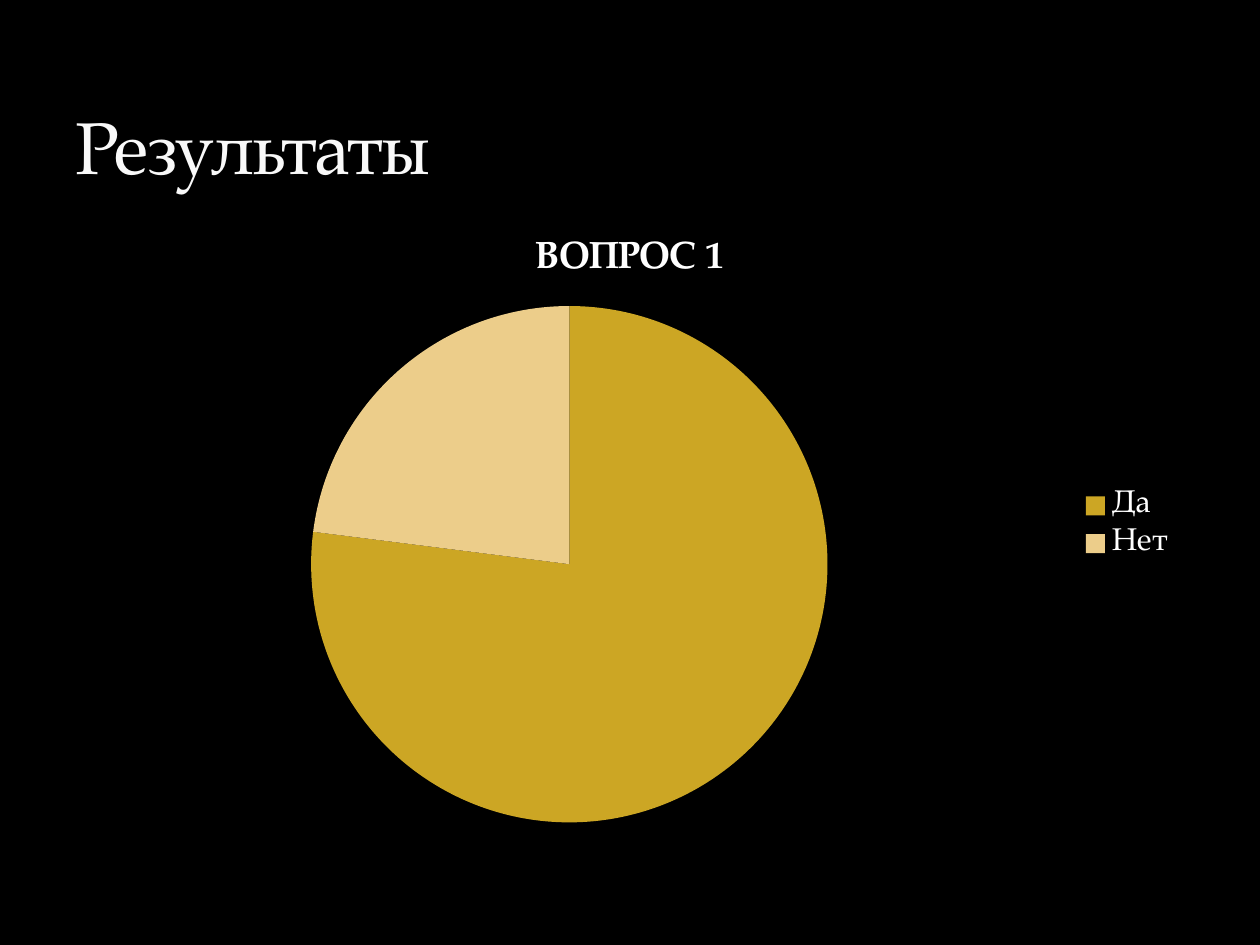
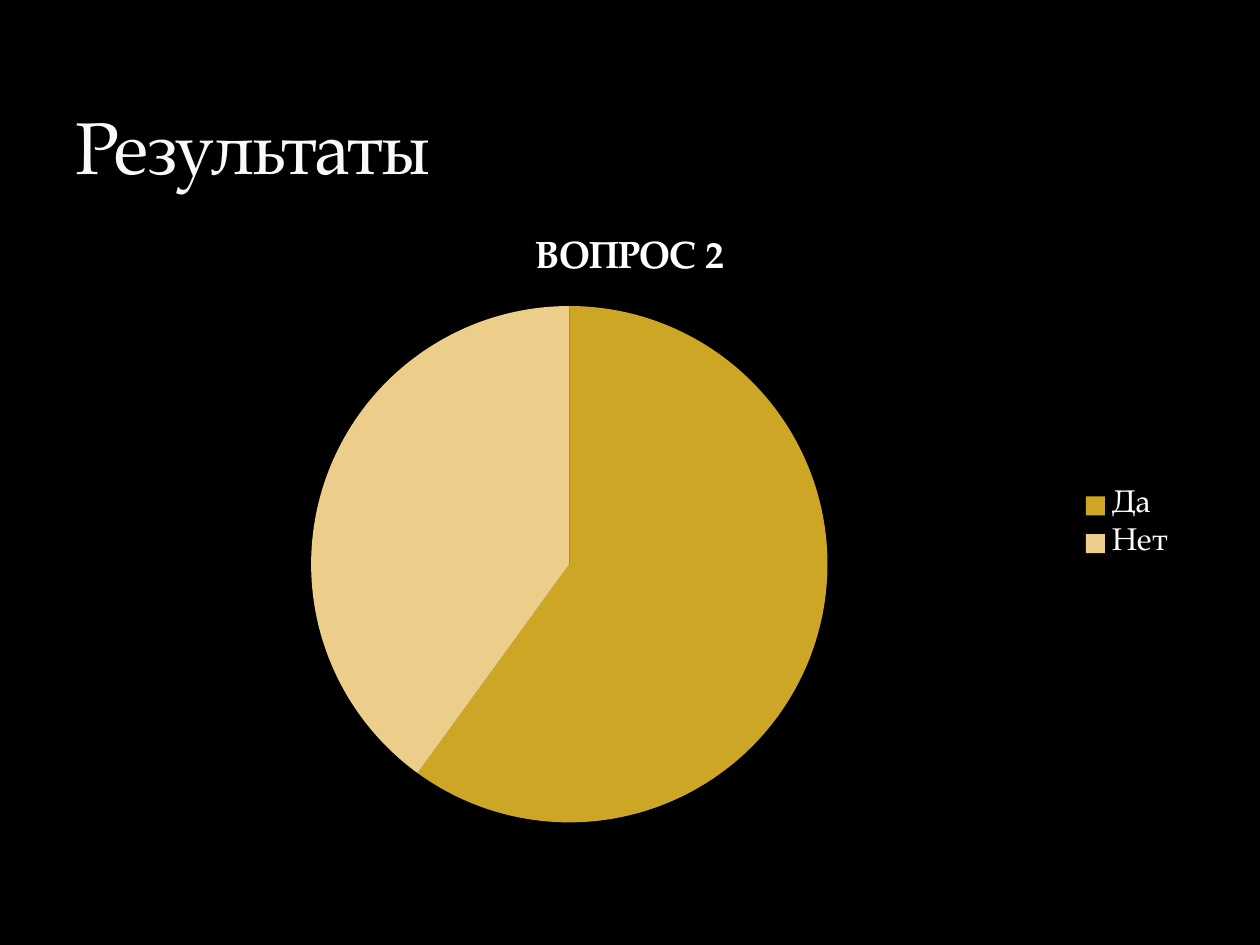
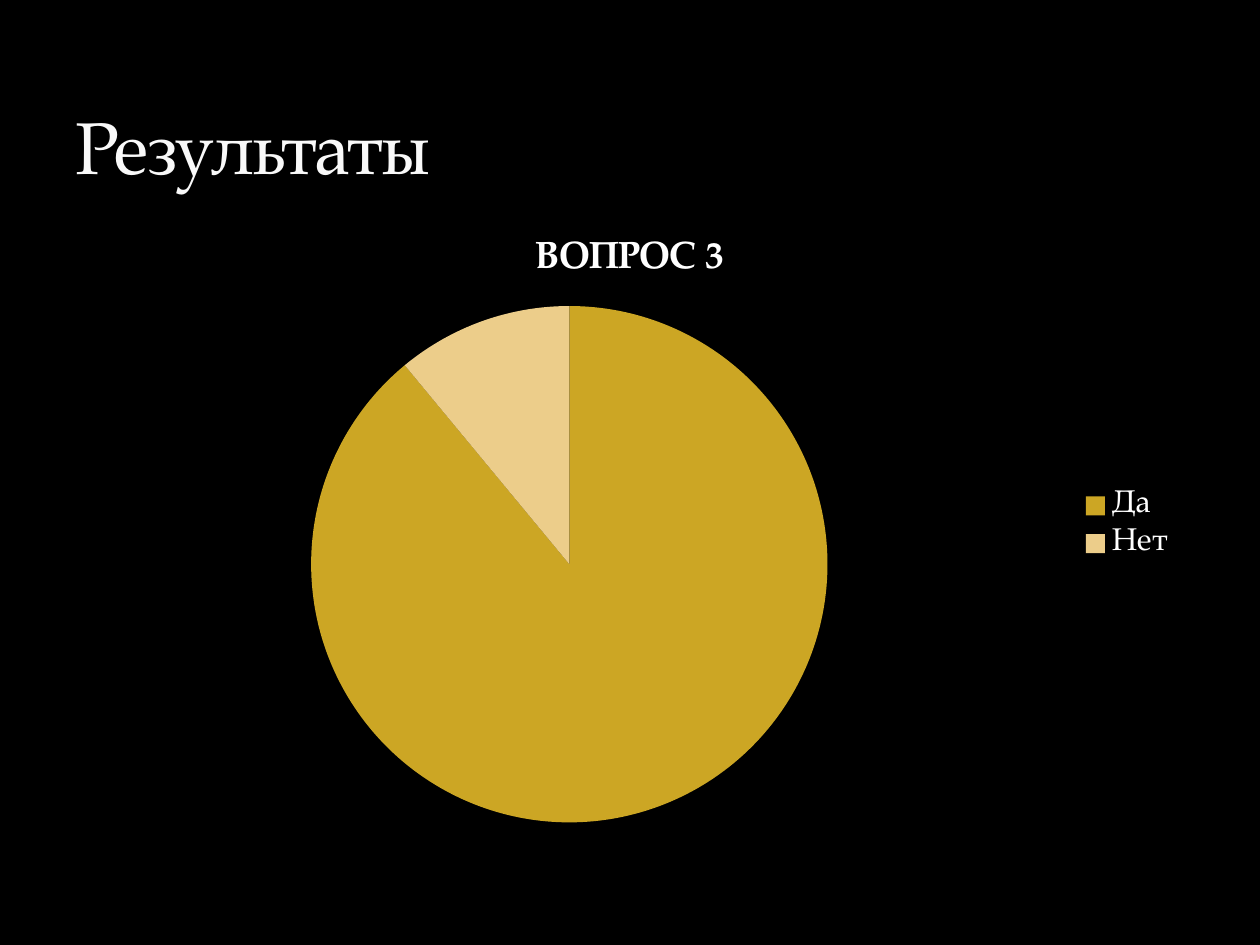
from dataclasses import dataclass

from lxml import etree
from pptx import Presentation
from pptx.chart.data import CategoryChartData
from pptx.dml.color import RGBColor
from pptx.enum.chart import XL_CHART_TYPE, XL_LEGEND_POSITION
from pptx.enum.text import MSO_ANCHOR, MSO_AUTO_SIZE, PP_ALIGN
from pptx.oxml.ns import qn
from pptx.slide import Slide
from pptx.text.text import Font
from pptx.util import Cm, Pt

PIE = XL_CHART_TYPE.PIE
LEGEND_RIGHT = XL_LEGEND_POSITION.RIGHT
ANCHOR_BOTTOM = MSO_ANCHOR.BOTTOM
ALIGN_LEFT = PP_ALIGN.LEFT
NO_AUTOFIT = MSO_AUTO_SIZE.NONE

COLORS = {
    "background": "000000",
    "heading": "F9F9F9",
    "heading_outline": "3C4422",
    "chart_text": "FFFFFF",
    "yes": "CCA624",
    "no": "ECCD8A",
}
FONT = "TeX Gyre Pagella"
HEADING = "Результаты"
ANSWERS = ("Да", "Нет ")
TITLE_ONLY_LAYOUT = 5

# Shared geometry
MARGIN = Cm(1.27)
CONTENT_WIDTH = Cm(22.86)
HEADING_TOP, HEADING_HEIGHT = Cm(0.42), Cm(3.39)
CHART_TOP, CHART_HEIGHT = Cm(4.23), Cm(12.7)


@dataclass(frozen=True)
class Question:
    title: str
    yes: int
    no: int


QUESTIONS = (
    Question("ВОПРОС 1", 77, 23),
    Question("ВОПРОС 2", 60, 40),
    Question("ВОПРОС 3", 89, 11),
)


def rgb(key: str) -> RGBColor:
    return RGBColor.from_string(COLORS[key])


def style_font(font: Font, size: float, color: str, bold: bool = False) -> None:
    font.name = FONT
    font.size = Pt(size)
    font.bold = bold
    font.color.rgb = rgb(color)


def add_heading(slide: Slide) -> None:
    heading = slide.shapes.title
    heading.left, heading.top = MARGIN, HEADING_TOP
    heading.width, heading.height = CONTENT_WIDTH, HEADING_HEIGHT
    frame = heading.text_frame
    frame.auto_size = NO_AUTOFIT
    frame.vertical_anchor = ANCHOR_BOTTOM
    frame.margin_bottom = Cm(0)
    paragraph = frame.paragraphs[0]
    paragraph.alignment = ALIGN_LEFT
    run = paragraph.add_run()
    run.text = HEADING
    style_font(run.font, 42, "heading")

    # Tight letter spacing and a faint outline
    properties = run.font._element
    properties.set("spc", "-100")
    outline = etree.Element(qn("a:ln"), w=str(Pt(0.25)))
    fill = etree.SubElement(outline, qn("a:solidFill"))
    color = etree.SubElement(fill, qn("a:srgbClr"), val=COLORS["heading_outline"])
    etree.SubElement(color, qn("a:alpha"), val="25000")
    properties.insert(0, outline)


def add_answer_pie(slide: Slide, question: Question) -> None:
    data = CategoryChartData()
    data.categories = ANSWERS
    data.add_series(question.title, (question.yes, question.no))
    chart = slide.shapes.add_chart(
        PIE, MARGIN, CHART_TOP, CONTENT_WIDTH, CHART_HEIGHT, data
    ).chart
    style_font(chart.font, 18, "chart_text")

    # Chart title
    chart.has_title = True
    run = chart.chart_title.text_frame.paragraphs[0].add_run()
    run.text = question.title
    style_font(run.font, 21.6, "chart_text", bold=True)
    chart.chart_title.include_in_layout = False

    # Legend
    chart.has_legend = True
    chart.legend.position = LEGEND_RIGHT
    chart.legend.include_in_layout = False

    # Slices
    plot = chart.plots[0]
    plot.vary_by_categories = True
    for index, answer in enumerate(("yes", "no")):
        slice_format = plot.series[0].points[index].format
        slice_format.fill.solid()
        slice_format.fill.fore_color.rgb = rgb(answer)
        slice_format.line.fill.background()


def main() -> None:
    deck = Presentation()
    deck.slide_width, deck.slide_height = Cm(25.4), Cm(19.05)
    backdrop = deck.slide_master.background.fill
    backdrop.solid()
    backdrop.fore_color.rgb = rgb("background")

    for question in QUESTIONS:
        slide = deck.slides.add_slide(deck.slide_layouts[TITLE_ONLY_LAYOUT])
        add_answer_pie(slide, question)
        add_heading(slide)
    deck.save("out.pptx")


if __name__ == "__main__":
    main()
